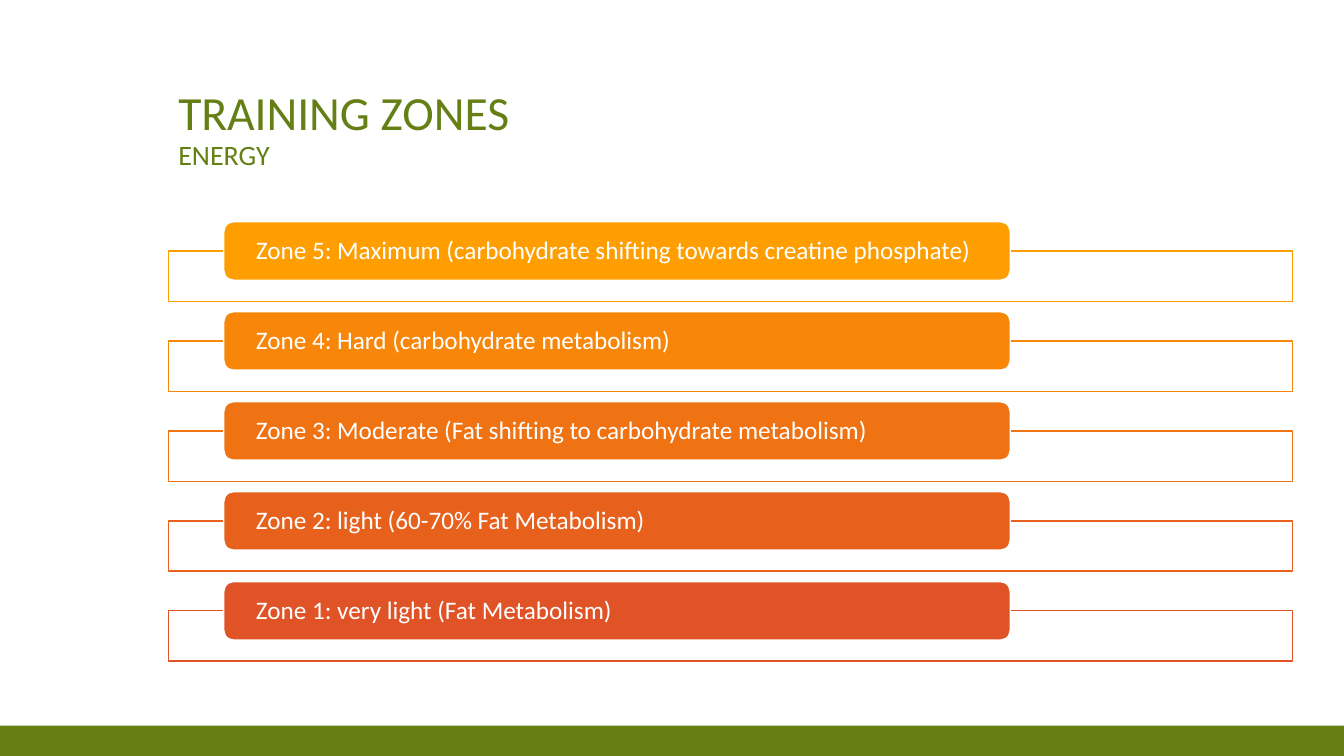
from dataclasses import dataclass

from pptx import Presentation
from pptx.dml.color import RGBColor
from pptx.enum.shapes import MSO_SHAPE as SHAPE
from pptx.enum.text import MSO_ANCHOR as ANCHOR, PP_ALIGN as ALIGN
from pptx.util import Inches, Pt


@dataclass(frozen=True)
class Theme:
    font: str = "Calibri"
    green: str = "657F14"
    white: str = "FFFFFF"
    zones: tuple = ("FE9E00", "F78609", "EF7213", "E7611D", "DF5327")
    title_size: int = 34
    subtitle_size: int = 20
    zone_size: int = 18


theme = Theme()


def add_box(kind, left, top, width, height, fill, line=None):
    sp = slide.shapes.add_shape(
        kind, Inches(left), Inches(top), Inches(width), Inches(height))
    sp.shadow.inherit = False
    sp.fill.solid()
    sp.fill.fore_color.rgb = RGBColor.from_string(fill)
    if line:
        sp.line.color.rgb = RGBColor.from_string(line)
        sp.line.width = Pt(1)
    else:
        sp.line.fill.background()
    return sp


def style_run(r, size, color):
    r.font.name = theme.font
    r.font.size = Pt(size)
    r.font.color.rgb = RGBColor.from_string(color)


prs = Presentation()
prs.slide_width, prs.slide_height = Inches(13.33), Inches(7.5)
slide = prs.slides.add_slide(prs.slide_layouts[6])

# Footer band
add_box(SHAPE.RECTANGLE, 0, 7.2, 13.33, 0.3, theme.green)

# Title and subtitle, separated by a line break
title = slide.shapes.add_textbox(Inches(1.67), Inches(0.5), Inches(10), Inches(1.25))
tf = title.text_frame
tf.word_wrap = True
tf.vertical_anchor = ANCHOR.BOTTOM
p = tf.paragraphs[0]
p.text = "TRAINING ZONES\vENERGY"
p.line_spacing = 0.9
for r, size in zip(p.runs, (theme.title_size, theme.subtitle_size)):
    style_run(r, size, theme.green)

# Training zones: an outlined frame with a label over its top edge
zones = [
    "Zone 5: Maximum (carbohydrate shifting towards creatine phosphate)",
    "Zone 4: Hard (carbohydrate metabolism)",
    "Zone 3: Moderate (Fat shifting to carbohydrate metabolism)",
    "Zone 2: light (60-70% Fat Metabolism)",
    "Zone 1: very light (Fat Metabolism)",
]
first_top, pitch = 2.2, 0.8925
for i, (zone, color) in enumerate(zip(zones, theme.zones)):
    top = first_top + i * pitch
    add_box(SHAPE.RECTANGLE, 1.67, top + 0.29, 11.15, 0.5, theme.white, color)
    label = add_box(SHAPE.ROUNDED_RECTANGLE, 2.22, top, 7.8, 0.58, color, theme.white)
    tf = label.text_frame
    tf.word_wrap = True
    tf.vertical_anchor = ANCHOR.MIDDLE
    tf.margin_left = tf.margin_right = Inches(0.29)
    tf.margin_top = tf.margin_bottom = 0
    p = tf.paragraphs[0]
    p.text = zone
    p.alignment = ALIGN.LEFT
    p.line_spacing = 0.9
    style_run(p.runs[0], theme.zone_size, theme.white)

prs.save("out.pptx")
